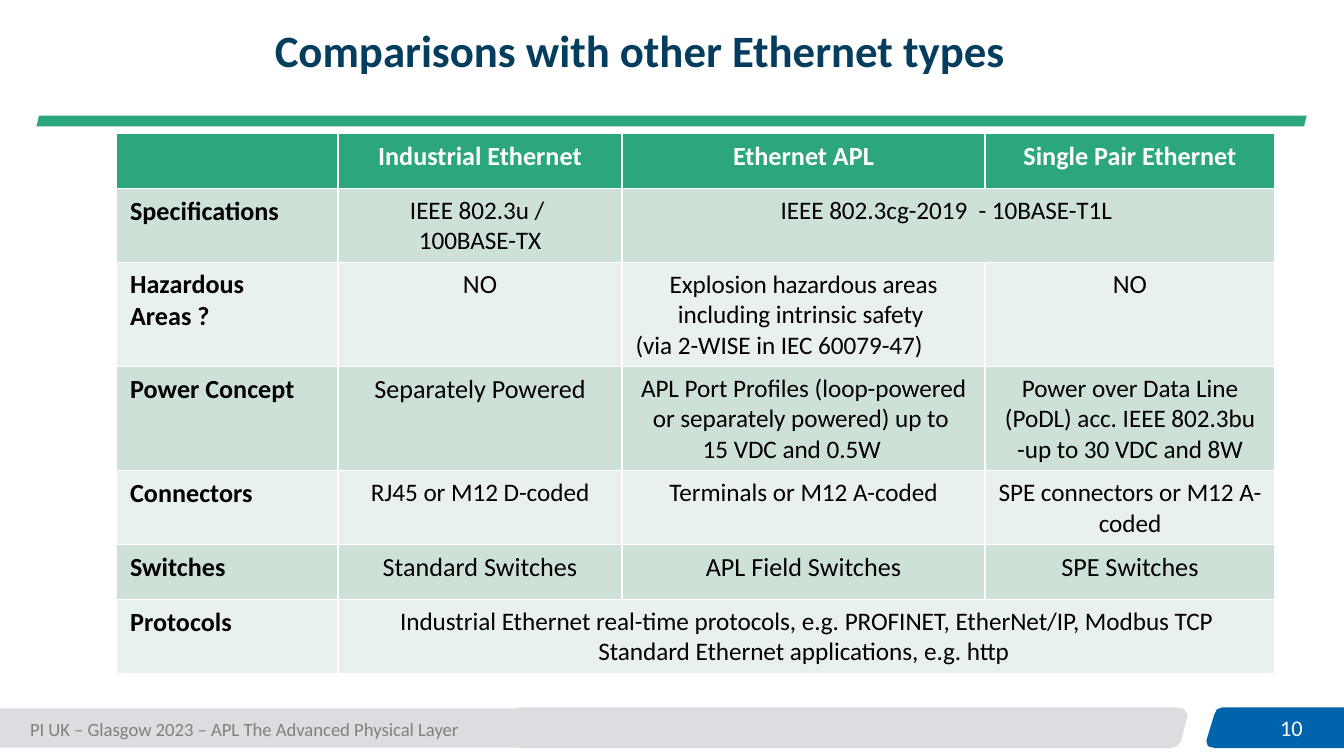
from pptx import Presentation
from pptx.dml.color import RGBColor
from pptx.enum.shapes import MSO_SHAPE
from pptx.enum.text import MSO_ANCHOR, PP_ALIGN
from pptx.util import Pt

COLORS = {
    "navy": "043D5D", "green": "2CA67B", "band": "CDE1D7", "pale": "E8F1EC",
    "grey": "DCDDE0", "blue": "0064AD", "muted": "808080",
    "white": "FFFFFF", "black": "000000",
}
FONT = "Calibri"
SMALL, LARGE = 13.5, 14

COLUMN_WIDTHS = [118.6, 152.2, 194.4, 155.4]
ROW_HEIGHT = 29.5
HEADER = ["", "Industrial Ethernet", "Ethernet APL", "Single Pair Ethernet"]
# Each row: label, then (text, size) per cell; the last cell spans what is left.
ROWS = [
    ("Specifications", [
        ("IEEE 802.3u / \n100BASE-TX", SMALL),
        ("IEEE 802.3cg-2019  - 10BASE-T1L\t", SMALL)]),
    ("Hazardous Areas ?", [
        ("NO", LARGE),
        ("Explosion hazardous areas including intrinsic safety \n"
         "(via 2-WISE in IEC 60079-47)\t", SMALL),
        ("NO", LARGE)]),
    ("Power Concept", [
        ("Separately Powered", LARGE),
        ("APL Port Profiles (loop-powered or separately powered) up to \n"
         "15 VDC and 0.5W\t", SMALL),
        ("Power over Data Line (PoDL) acc. IEEE 802.3bu "
         "-up to 30 VDC and 8W", SMALL)]),
    ("Connectors", [
        ("RJ45 or M12 D-coded", SMALL),
        ("Terminals or M12 A-coded", SMALL),
        ("SPE connectors or M12 A-coded", SMALL)]),
    ("Switches", [
        ("Standard Switches", LARGE),
        ("APL Field Switches", LARGE),
        ("SPE Switches", LARGE)]),
    ("Protocols", [
        ("Industrial Ethernet real-time protocols, e.g. PROFINET, "
         "EtherNet/IP, Modbus TCP\nStandard Ethernet applications, e.g. http ",
         SMALL)]),
]

FOOTER_BAR = [(278, 379.5), (630, 379.5), (634, 380.3), (635.8, 383),
              (632.2, 397), (630.5, 399.3), (627, 400.3), (278, 400.3)]
NUMBER_TAB = [(720, 379.5), (655, 379.5), (652.3, 380.4), (651, 383),
              (646.8, 396.8), (647.5, 399.4), (651, 400.3), (720, 400.3)]


def rgb(name):
    return RGBColor.from_string(COLORS[name])


def write(tf, text, size, color, bold=False, align=PP_ALIGN.LEFT):
    """Fill a text frame, one paragraph per line of text."""
    for i, line in enumerate(text.split("\n")):
        p = tf.add_paragraph() if i else tf.paragraphs[0]
        p.alignment = align
        r = p.add_run()
        r.text = line
        r.font.name = FONT
        r.font.size = Pt(size)
        r.font.bold = bold
        r.font.color.rgb = rgb(color)


def paint(sp, color, outlined=False):
    sp.shadow.inherit = False
    sp.fill.solid()
    sp.fill.fore_color.rgb = rgb(color)
    if outlined:
        sp.line.color.rgb = rgb(color)
        sp.line.width = Pt(1)
    else:
        sp.line.fill.background()


def add_bar(s, kind, x, y, w, h, color):
    paint(s.shapes.add_shape(kind, Pt(x), Pt(y), Pt(w), Pt(h)), color)


def add_outline(s, points, color):
    points = [(Pt(x), Pt(y)) for x, y in points]
    builder = s.shapes.build_freeform(*points[0])
    builder.add_line_segments(points[1:], close=True)
    paint(builder.convert_to_shape(), color, outlined=True)


def add_text(s, x, y, w, h, text, size, color, align=PP_ALIGN.LEFT):
    tf = s.shapes.add_textbox(Pt(x), Pt(y), Pt(w), Pt(h)).text_frame
    tf.word_wrap = True
    tf.vertical_anchor = MSO_ANCHOR.MIDDLE
    write(tf, text, size, color, align=align)


def set_title(s, text):
    title = s.shapes.title
    title.left, title.top, title.width, title.height = (
        Pt(140), Pt(12), Pt(570), Pt(32.5))
    tf = title.text_frame
    tf.vertical_anchor = MSO_ANCHOR.MIDDLE
    write(tf, text, 24, "navy", bold=True)
    tf.paragraphs[0].line_spacing = 0.9


def fill_cell(cell, text, size, color, fill, bold, align=PP_ALIGN.CENTER):
    cell.fill.solid()
    cell.fill.fore_color.rgb = rgb(fill)
    if text:
        write(cell.text_frame, text, size, color, bold, align)


def add_comparison_table(s):
    n_rows, n_cols = len(ROWS) + 1, len(COLUMN_WIDTHS)
    table = s.shapes.add_table(
        n_rows, n_cols, Pt(62.5), Pt(71.5),
        Pt(sum(COLUMN_WIDTHS)), Pt(ROW_HEIGHT * n_rows)).table
    table.horz_banding = False
    for column, width in zip(table.columns, COLUMN_WIDTHS):
        column.width = Pt(width)
    for row in table.rows:
        row.height = Pt(ROW_HEIGHT)
    for c, text in enumerate(HEADER):
        fill_cell(table.cell(0, c), text, LARGE, "white", "green", True)
    for r, (label, cells) in enumerate(ROWS, 1):
        fill = "band" if r % 2 else "pale"
        fill_cell(table.cell(r, 0), label, LARGE, "black", fill, True,
                  PP_ALIGN.LEFT)
        for c, (text, size) in enumerate(cells, 1):
            fill_cell(table.cell(r, c), text, size, "black", fill, False)
        if len(cells) < n_cols - 1:
            table.cell(r, len(cells)).merge(table.cell(r, n_cols - 1))


def add_footer(s):
    add_outline(s, FOOTER_BAR, "grey")
    add_outline(s, NUMBER_TAB, "blue")
    add_bar(s, MSO_SHAPE.RECTANGLE, 0, 379.5, 283.5, 21, "grey")
    add_text(s, 662.5, 379.5, 42.5, 21, "10", 12, "white", PP_ALIGN.RIGHT)
    add_text(s, 9, 381, 260, 19.5,
             "PI UK – Glasgow 2023 – APL The Advanced Physical Layer",
             10, "muted")


def main():
    prs = Presentation()
    prs.slide_width, prs.slide_height = Pt(720), Pt(405)
    s = prs.slides.add_slide(prs.slide_layouts[5])
    add_footer(s)
    add_bar(s, MSO_SHAPE.PARALLELOGRAM, 19.5, 62, 680.5, 5.75, "green")
    add_comparison_table(s)
    set_title(s, "Comparisons with other Ethernet types")
    prs.save("out.pptx")


if __name__ == "__main__":
    main()
